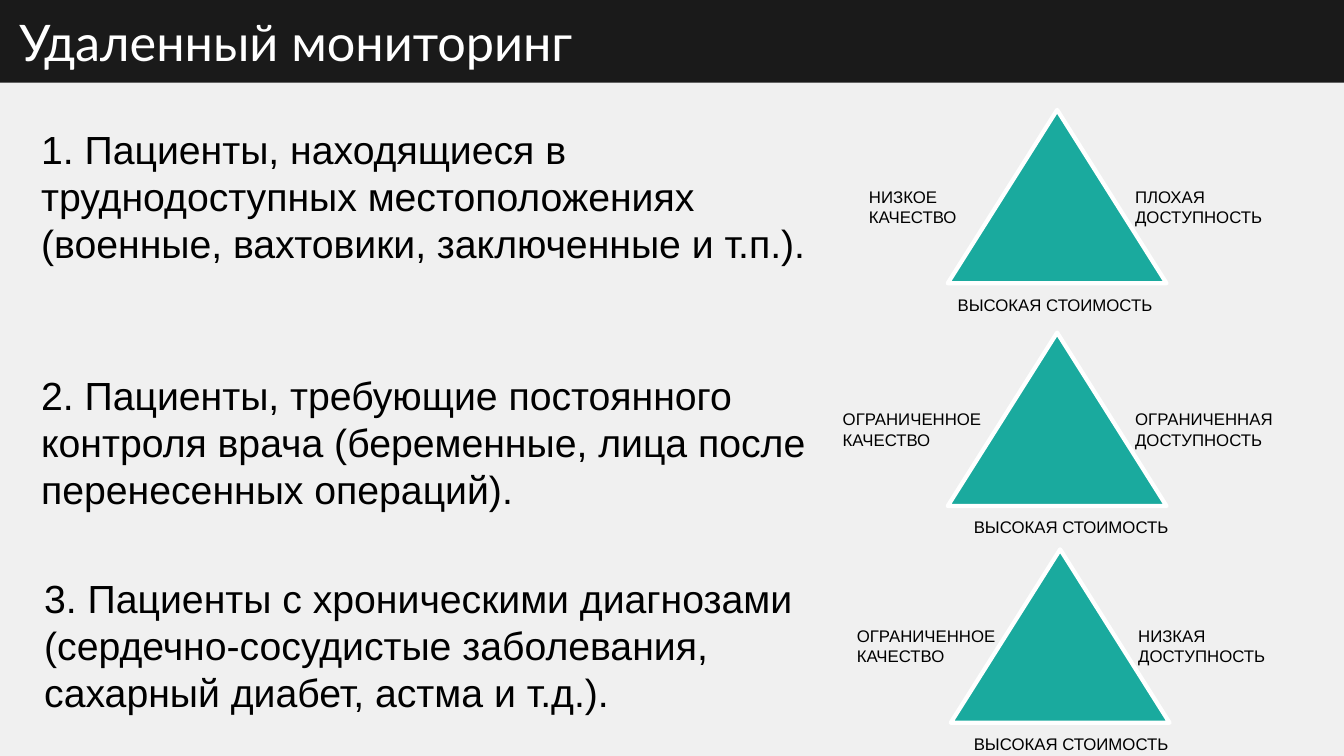
from dataclasses import dataclass

from pptx import Presentation
from pptx.dml.color import RGBColor
from pptx.enum.shapes import MSO_SHAPE as Shape
from pptx.enum.text import MSO_ANCHOR, MSO_AUTO_SIZE, PP_ALIGN
from pptx.slide import Slide
from pptx.text.text import TextFrame
from pptx.util import Inches, Pt


@dataclass(frozen=True)
class Theme:
    background: RGBColor = RGBColor(0xF0, 0xF0, 0xF0)
    bar: RGBColor = RGBColor(0x1A, 0x1A, 0x1A)
    accent: RGBColor = RGBColor(0x1A, 0xAA, 0x9E)
    light: RGBColor = RGBColor(0xFF, 0xFF, 0xFF)
    dark: RGBColor = RGBColor(0, 0, 0)
    title_font: str = "Lato"
    body_font: str = "Arial"
    title_size: int = 36
    body_size: int = 28
    label_size: int = 12
    outline: int = 3


THEME = Theme()
TITLE_ONLY = 5


@dataclass(frozen=True)
class PatientGroup:
    """One patient group: its description and its labelled triangle."""
    text: str
    text_left: float
    text_top: float
    triangle_left: float
    triangle_top: float
    quality: str
    quality_left: float
    quality_width: float
    access: str
    cost_left: float


GROUPS = [
    PatientGroup(
        "1. Пациенты, находящиеся в труднодоступных местоположениях "
        "(военные, вахтовики, заключенные и т.п.).",
        0.31, 1.19, 9.4, 1.09, "НИЗКОЕ\nКАЧЕСТВО", 8.52, 1.38,
        "ПЛОХАЯ\nДОСТУПНОСТЬ", 9.4),
    PatientGroup(
        "2. Пациенты, требующие постоянного контроля врача "
        "(беременные, лица после перенесенных операций).",
        0.31, 3.63, 9.4, 3.3, "ОГРАНИЧЕННОЕ\nКАЧЕСТВО", 8.26, 1.81,
        "ОГРАНИЧЕННАЯ ДОСТУПНОСТЬ", 9.56),
    PatientGroup(
        "3. Пациенты с хроническими диагнозами (сердечно-сосудистые "
        "заболевания, сахарный диабет, астма и т.д.).",
        0.34, 5.65, 9.43, 5.45, "ОГРАНИЧЕННОЕ\nКАЧЕСТВО", 8.4, 1.71,
        "НИЗКАЯ\nДОСТУПНОСТЬ", 9.56),
]


def format_text(frame: TextFrame, font: str, size: int, color: RGBColor) -> None:
    for para in frame.paragraphs:
        para.alignment = PP_ALIGN.LEFT
        for span in para.runs:
            span.font.name = font
            span.font.size = Pt(size)
            span.font.color.rgb = color


def add_text(page: Slide, text: str, left: float, top: float, width: float,
             height: float, size: int, wrap: bool = True) -> None:
    box = page.shapes.add_textbox(Inches(left), Inches(top), Inches(width), Inches(height))
    frame = box.text_frame
    frame.text = text
    frame.word_wrap = wrap
    frame.auto_size = MSO_AUTO_SIZE.SHAPE_TO_FIT_TEXT
    format_text(frame, THEME.body_font, size, THEME.dark)


def add_title(page: Slide, text: str, slide_width: float) -> None:
    title = page.shapes.title
    title.left, title.top = Inches(0.09), Inches(0.05)
    title.width, title.height = Inches(9.47), Inches(0.72)
    frame = title.text_frame
    frame.text = text
    frame.auto_size = MSO_AUTO_SIZE.NONE
    frame.vertical_anchor = MSO_ANCHOR.MIDDLE
    format_text(frame, THEME.title_font, THEME.title_size, THEME.light)

    # Dark bar, placed behind the title
    bar = page.shapes.add_shape(Shape.RECTANGLE, 0, 0, Inches(slide_width), Inches(0.82))
    bar.shadow.inherit = False
    bar.fill.solid()
    bar.fill.fore_color.rgb = THEME.bar
    bar.line.fill.background()
    title.element.addprevious(bar.element)


def add_triangle(page: Slide, group: PatientGroup) -> None:
    left, top = group.triangle_left, group.triangle_top
    triangle = page.shapes.add_shape(
        Shape.ISOSCELES_TRIANGLE, Inches(left), Inches(top), Inches(2.17), Inches(1.72))
    triangle.shadow.inherit = False
    triangle.fill.solid()
    triangle.fill.fore_color.rgb = THEME.accent
    triangle.line.color.rgb = THEME.light
    triangle.line.width = Pt(THEME.outline)

    # Labels below, to the left and to the right
    side_top = top + 0.71
    add_text(page, "ВЫСОКАЯ СТОИМОСТЬ", group.cost_left, top + 1.78, 2.16, 0.3,
             THEME.label_size, wrap=False)
    add_text(page, group.quality, group.quality_left, side_top,
             group.quality_width, 0.5, THEME.label_size)
    add_text(page, group.access, left + 1.76, side_top, 1.88, 0.5, THEME.label_size)


def main() -> None:
    slide_width = 13.33
    deck = Presentation()
    deck.slide_width, deck.slide_height = Inches(slide_width), Inches(7.5)
    page = deck.slides.add_slide(deck.slide_layouts[TITLE_ONLY])
    page.background.fill.solid()
    page.background.fill.fore_color.rgb = THEME.background

    add_title(page, "Удаленный мониторинг", slide_width)
    for group in GROUPS:
        add_triangle(page, group)
    for group in GROUPS:
        add_text(page, group.text, group.text_left, group.text_top, 7.92, 1.51,
                 THEME.body_size)

    deck.save("out.pptx")


if __name__ == "__main__":
    main()
